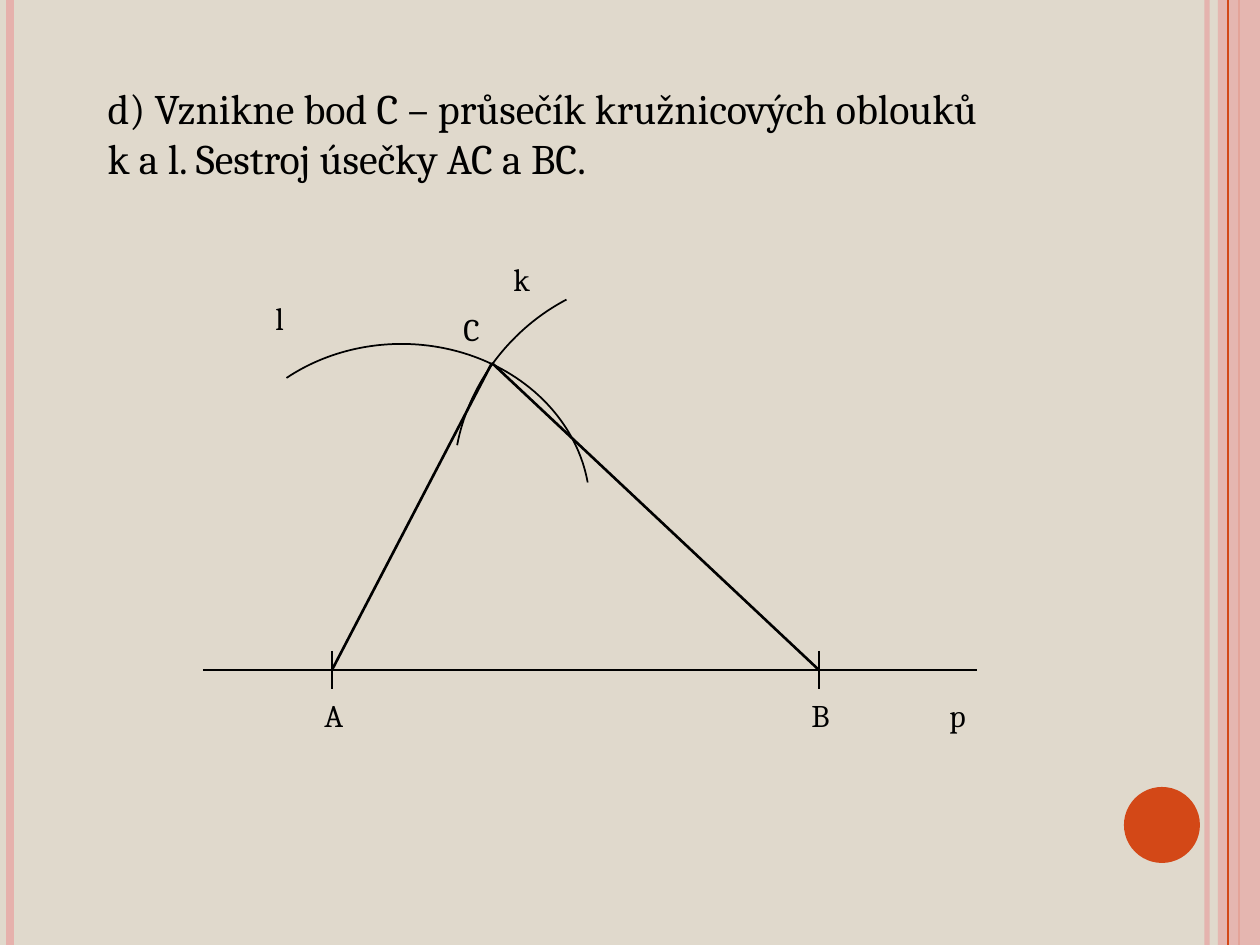
from dataclasses import dataclass

from lxml import etree
from pptx import Presentation
from pptx import util as u
from pptx.dml.color import RGBColor
from pptx.enum import shapes, text
from pptx.oxml.ns import qn

PX = 914400 // 126
WIDTH, HEIGHT = 1260, 945


@dataclass(frozen=True)
class Theme:
    font: str = "Cambria"
    ink: str = "000000"
    background: str = "E0D9CC"
    pink: str = "E6B1AC"
    orange: str = "D34817"
    title_size: int = 24
    label_size: int = 18


THEME = Theme()

TITLE = ["d) Vznikne bod C – průsečík kružnicových oblouků",
         "k a l. Sestroj úsečky AC a BC."]
TITLE_BOX = (95, 76, 1071, 115)

# x, colour, width in points, opacity in percent
STRIPES_BEHIND = [(1207, THEME.pink, 3, 93),
                  (10, THEME.pink, 4.5, 100),
                  (1239, THEME.orange, 1.5, 100)]
STRIPES_FRONT = [(1228, THEME.orange, 0.75, 100)]
BAND = (1218, 0, 42, HEIGHT)
DOT = (1124, 787, 76, 76)

A, B, C = (332, 670), (819, 670), (492, 363)
LINE_P = ((203, 670), (977, 670))
TICK = 19

# box, start and end in degrees, rotation
ARCS = [((213, 344, 377, 328), 228.5, 352.2, 0),
        ((442, 290, 377, 328), 228.5, 293.1, 314.4)]

# text, left, top, width
LABELS = [("A", 312, 690, 89), ("B", 799, 690, 59), ("p", 937, 690, 49),
          ("k", 501, 254, 89), ("l", 263, 293, 89), ("C", 451, 304, 69)]
LABEL_HEIGHT = 50


def emu(*lengths):
    return [u.Emu(length * PX) for length in lengths]


def rgb(colour):
    return RGBColor.from_string(colour)


def set_opacity(part, percent):
    colour = next(part._element.spPr.iter(qn("a:srgbClr")))
    etree.SubElement(colour, qn("a:alpha")).set("val", str(percent * 1000))


def add_line(slide, start, end, width, colour=THEME.ink):
    line = slide.shapes.add_connector(shapes.MSO_CONNECTOR.STRAIGHT,
                                      *emu(*start, *end))
    line.line.color.rgb = rgb(colour)
    line.line.width = u.Pt(width)
    etree.SubElement(line._element.spPr, qn("a:effectLst"))
    return line


def add_stripes(slide, stripes):
    for x, colour, width, opacity in stripes:
        stripe = add_line(slide, (x, 0), (x, HEIGHT), width, colour)
        if opacity < 100:
            set_opacity(stripe, opacity)


def add_filled(slide, kind, box, colour):
    shape = slide.shapes.add_shape(kind, *emu(*box))
    shape.shadow.inherit = False
    shape.fill.solid()
    shape.fill.fore_color.rgb = rgb(colour)
    shape.line.fill.background()
    return shape


def add_arc(slide, box, start, end, rotation):
    arc = slide.shapes.add_shape(shapes.MSO_SHAPE.ARC, *emu(*box))
    arc.shadow.inherit = False
    # python-pptx scales adjustments by 100000; angles are 60000ths of a degree
    arc.adjustments[0], arc.adjustments[1] = start * 0.6, end * 0.6
    arc.rotation = rotation
    arc.fill.background()
    arc.line.color.rgb = rgb(THEME.ink)
    arc.line.width = u.Pt(1)


def write(frame, words, size):
    frame.text = words
    frame.word_wrap = True
    frame.auto_size = text.MSO_AUTO_SIZE.NONE
    frame.vertical_anchor = text.MSO_ANCHOR.TOP
    for paragraph in frame.paragraphs:
        paragraph.alignment = text.PP_ALIGN.LEFT
        for run in paragraph.runs:
            run.font.name = THEME.font
            run.font.size = u.Pt(size)
            run.font.color.rgb = rgb(THEME.ink)


def add_decoration(slide):
    add_stripes(slide, STRIPES_BEHIND)
    band = add_filled(slide, shapes.MSO_SHAPE.RECTANGLE, BAND, THEME.pink)
    set_opacity(band, 87)
    add_stripes(slide, STRIPES_FRONT)
    add_filled(slide, shapes.MSO_SHAPE.OVAL, DOT, THEME.orange)


def add_construction(slide):
    add_line(slide, *LINE_P, 1.5)
    for x, y in (A, B):
        add_line(slide, (x, y - TICK), (x, y + TICK), 1)
    for arc in ARCS:
        add_arc(slide, *arc)
    for point in (A, B):
        add_line(slide, point, C, 1.5)
    for words, left, top, width in LABELS:
        label = slide.shapes.add_textbox(*emu(left, top, width, LABEL_HEIGHT))
        write(label.text_frame, words, THEME.label_size)


def main():
    deck = Presentation()
    deck.slide_width, deck.slide_height = emu(WIDTH, HEIGHT)
    slide = deck.slides.add_slide(deck.slide_layouts[5])
    slide.background.fill.solid()
    slide.background.fill.fore_color.rgb = rgb(THEME.background)

    title = slide.shapes.title
    title.left, title.top, title.width, title.height = emu(*TITLE_BOX)
    write(title.text_frame, "\n".join(TITLE), THEME.title_size)

    add_decoration(slide)
    add_construction(slide)
    deck.save("out.pptx")


if __name__ == "__main__":
    main()
